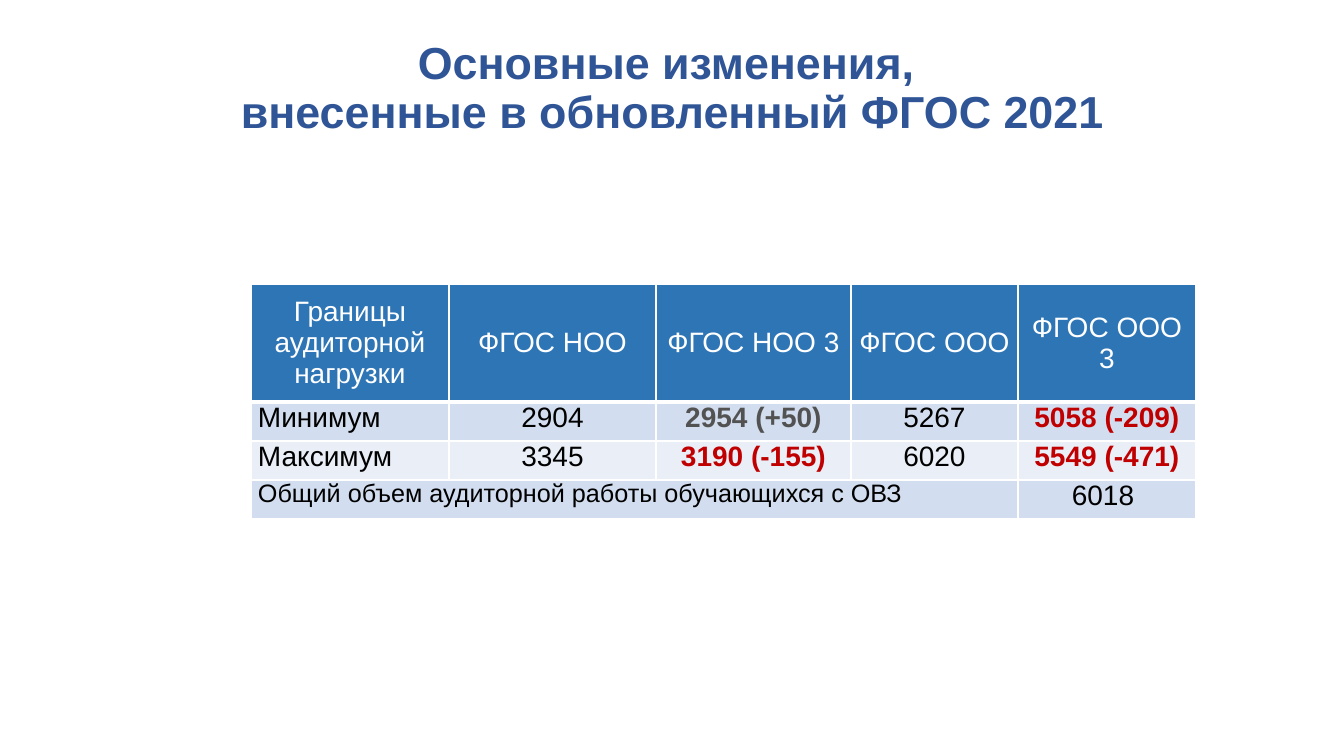
from lxml.etree import SubElement
from pptx import Presentation
from pptx.dml.color import RGBColor as RGB
from pptx.enum.text import MSO_ANCHOR as Anchor, PP_ALIGN as Align
from pptx.oxml.ns import qn
from pptx.util import Pt

TITLE = "Основные изменения, \vвнесенные в обновленный ФГОС 2021"
ROWS = [
    ["Границы аудиторной нагрузки", "ФГОС НОО", "ФГОС НОО 3", "ФГОС ООО", "ФГОС ООО 3"],
    ["Минимум", "2904", "2954 (+50)", "5267", "5058 (-209)"],
    ["Максимум", "3345", "3190 (-155)", "6020", "5549 (-471)"],
    ["Общий объем аудиторной работы обучающихся с ОВЗ", "", "", "", "6018 "],
]
WIDTHS = [198, 207, 195, 167, 178]
HEIGHTS = [118, 39, 39, 39]

NAVY = RGB(0x2F, 0x55, 0x97)
BLUE = RGB(0x2E, 0x75, 0xB6)
BANDS = [RGB(0xEA, 0xEF, 0xF7), RGB(0xD2, 0xDE, 0xEF)]
WHITE = RGB(0xFF, 0xFF, 0xFF)
BLACK = RGB(0, 0, 0)
GRAY = RGB(0x52, 0x52, 0x52)
RED = RGB(0xC0, 0, 0)


def px(n):
    return round(n * 914400 / 100.8)


def write(frame, text, size=20, color=BLACK, bold=False, align=Align.CENTER, space=1.0):
    frame.word_wrap = True
    para = frame.paragraphs[0]
    para.text = text
    para.alignment = align
    para.line_spacing = space
    for run in para.runs:
        font = run.font
        font.name, font.size, font.bold = "Arial", Pt(size), bold
        font.color.rgb = color


def edge(cell, bottom):
    """Draw white cell borders, 1 pt wide except for the bottom one."""
    props = cell._tc.get_or_add_tcPr()
    for i, (side, width) in enumerate([("L", 1), ("R", 1), ("T", 1), ("B", bottom)]):
        line = props.makeelement(qn(f"a:ln{side}"), {"w": str(Pt(width))})
        fill = SubElement(line, qn("a:solidFill"))
        SubElement(fill, qn("a:srgbClr"), val=str(WHITE))
        props.insert(i, line)


def style(text):
    """Choose the colour and weight that mark a change in hours."""
    if "(" not in text:
        return {}
    return {"bold": True, "color": RED if "(-" in text else GRAY}


def main():
    deck = Presentation()
    deck.slide_width, deck.slide_height = px(1344), px(756)
    slide = deck.slides.add_slide(deck.slide_layouts[6])

    title = slide.shapes.add_textbox(px(93), px(36), px(1159), px(146))
    write(title.text_frame, TITLE, size=32, color=NAVY, bold=True, space=0.9)

    grid = slide.shapes.add_table(len(ROWS), len(WIDTHS), px(251), px(284),
                                  px(sum(WIDTHS)), px(sum(HEIGHTS))).table
    for col, width in zip(grid.columns, WIDTHS):
        col.width = px(width)
    for row, height in zip(grid.rows, HEIGHTS):
        row.height = px(height)
    grid.cell(3, 0).merge(grid.cell(3, 3))

    for r, texts in enumerate(ROWS):
        head = r == 0
        for c, text in enumerate(texts):
            cell = grid.cell(r, c)
            cell.margin_left = cell.margin_right = px(7)
            cell.margin_top = cell.margin_bottom = 0
            cell.vertical_anchor = Anchor.MIDDLE if head else Anchor.TOP
            cell.fill.solid()
            cell.fill.fore_color.rgb = BLUE if head else BANDS[r % 2]
            edge(cell, 3 if head else 1)
            if cell.is_spanned:
                continue
            look = {"color": WHITE} if head else style(text)
            if c == 0 and not head:
                look["align"] = Align.LEFT
            write(cell.text_frame, text, size=18 if cell.is_merge_origin else 20, **look)

    deck.save("out.pptx")


if __name__ == "__main__":
    main()
